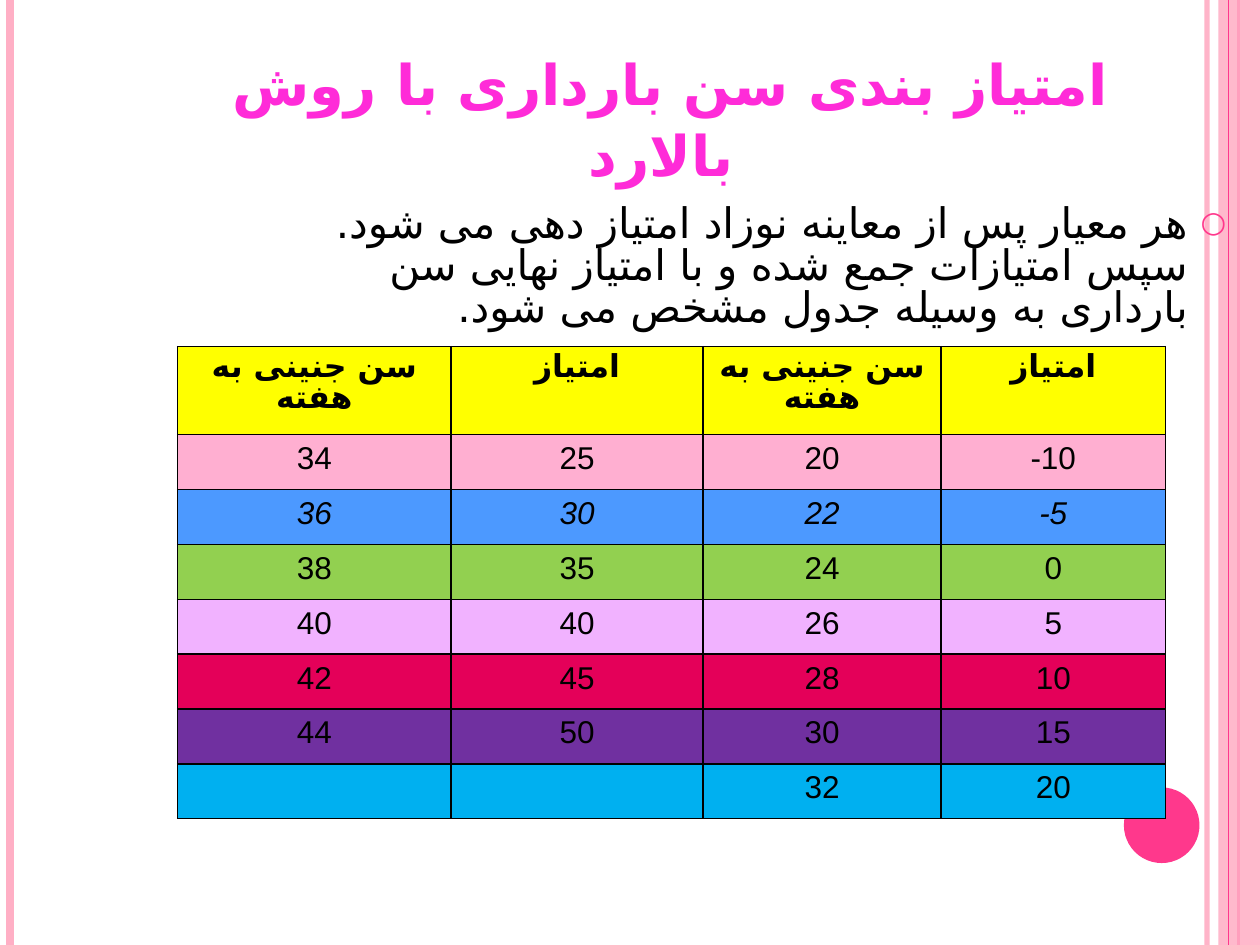
from lxml.etree import SubElement
from pptx import Presentation
from pptx.dml.color import RGBColor
from pptx.enum.shapes import MSO_CONNECTOR, MSO_SHAPE
from pptx.enum.text import MSO_ANCHOR, MSO_AUTO_SIZE, PP_ALIGN
from pptx.oxml.ns import qn
from pptx.util import Inches, Pt

BLACK = RGBColor(0x00, 0x00, 0x00)
PINK = RGBColor(0xFF, 0x38, 0x8C)
PALE_PINK = RGBColor(0xFF, 0xAF, 0xC5)
MAGENTA = RGBColor(0xFF, 0x2B, 0xD8)
MAROON = RGBColor(0x80, 0x00, 0x00)
YELLOW = RGBColor(0xFF, 0xFF, 0x00)
ROSE = RGBColor(0xFF, 0xAF, 0xD1)
BLUE = RGBColor(0x4C, 0x99, 0xFF)
GREEN = RGBColor(0x92, 0xD0, 0x50)
LILAC = RGBColor(0xF1, 0xB2, 0xFF)
CRIMSON = RGBColor(0xE4, 0x00, 0x59)
PURPLE = RGBColor(0x70, 0x30, 0xA0)
CYAN = RGBColor(0x00, 0xB0, 0xF0)

ARABIC_FONT = "DejaVu Sans"
TITLE = "امتیاز بندی سن بارداری با روش بالارد"
BODY = (
    "هر معیار پس از معاینه نوزاد امتیاز دهی می شود. "
    "سپس امتیازات جمع شده و با امتیاز نهایی سن بارداری به وسیله جدول مشخص می شود."
)
AGE, SCORE = "سن جنینی به هفته", "امتیاز"
ROWS = [
    (YELLOW, (AGE, SCORE, AGE, SCORE)),
    (ROSE, ("34", "25", "20", "-10")),
    (BLUE, ("36", "30", "22", "-5")),
    (GREEN, ("38", "35", "24", "0")),
    (LILAC, ("40", "40", "26", "5")),
    (CRIMSON, ("42", "45", "28", "10")),
    (PURPLE, ("44", "50", "30", "15")),
    (CYAN, ("", "", "32", "20")),
]
COLUMN_WIDTHS = (2.17, 2, 1.89, 1.78)
TABLE_HEIGHT, HEADER_HEIGHT = 3.75, 0.7
ROW_HEIGHT = (TABLE_HEIGHT - HEADER_HEIGHT) / (len(ROWS) - 1)
ITALIC_ROW = 2


def set_alpha(fill_parent, percent):
    color = fill_parent.find(".//" + qn("a:srgbClr"))
    SubElement(color, qn("a:alpha"), val=str(percent * 1000))


def add_stripe(slide, left, color, width):
    line = slide.shapes.add_connector(
        MSO_CONNECTOR.STRAIGHT, Inches(left), 0, Inches(left), Inches(7.5)
    )
    line.line.color.rgb = color
    line.line.width = Pt(width)
    SubElement(line.element.spPr, qn("a:effectLst"))
    return line


def add_filled(slide, kind, left, top, width, height, color):
    shape = slide.shapes.add_shape(
        kind, Inches(left), Inches(top), Inches(width), Inches(height)
    )
    shape.shadow.inherit = False
    shape.fill.solid()
    shape.fill.fore_color.rgb = color
    shape.line.fill.background()
    return shape


def add_text_box(slide, left, top, width, height):
    box = slide.shapes.add_textbox(Inches(left), Inches(top), Inches(width), Inches(height))
    box.text_frame.word_wrap = True
    return box.text_frame


def style_span(span, font, size, color, bold=False, italic=False):
    span.font.name = font
    span.font.size = Pt(size)
    span.font.color.rgb = color
    span.font.bold = bold
    span.font.italic = italic
    SubElement(span._r.get_or_add_rPr(), qn("a:cs"), typeface=ARABIC_FONT)


def add_borders(cell):
    properties = cell._tc.get_or_add_tcPr()
    for index, side in enumerate(("a:lnL", "a:lnR", "a:lnT", "a:lnB")):
        border = properties.makeelement(qn(side), {"w": str(Pt(1))})
        fill = SubElement(border, qn("a:solidFill"))
        SubElement(fill, qn("a:srgbClr"), val=str(BLACK))
        properties.insert(index, border)


def add_decoration(slide):
    set_alpha(add_stripe(slide, 9.58, PALE_PINK, 3).element.spPr, 93)
    add_stripe(slide, 0.08, PALE_PINK, 4.5)
    add_stripe(slide, 9.83, PINK, 1.5)
    band = add_filled(slide, MSO_SHAPE.RECTANGLE, 9.67, 0, 0.33, 7.5, PALE_PINK)
    set_alpha(band.element.spPr, 87)
    add_stripe(slide, 9.75, PINK, 0.75)
    add_filled(slide, MSO_SHAPE.OVAL, 8.92, 6.25, 0.6, 0.6, PINK)


def add_body(slide):
    frame = add_text_box(slide, 2.33, 1.58, 7.5, 4.95)
    para = frame.paragraphs[0]
    para.text = BODY
    para.alignment = PP_ALIGN.RIGHT
    para.line_spacing = 0.83
    para.space_before = Pt(6)
    style_span(para.runs[0], "Cambria", 24, BLACK)
    properties = para._p.get_or_add_pPr()
    properties.set("rtl", "1")
    properties.set("marL", str(Inches(0.3)))
    properties.set("indent", str(Inches(-0.3)))
    bullet_color = SubElement(properties, qn("a:buClr"))
    SubElement(bullet_color, qn("a:srgbClr"), val=str(PINK))
    SubElement(properties, qn("a:buSzPct"), val="70000")
    SubElement(properties, qn("a:buFont"), typeface=ARABIC_FONT)
    SubElement(properties, qn("a:buChar"), char="○")


def add_title(slide):
    frame = add_text_box(slide, 1.33, 0.83, 7.83, 0.71)
    frame.vertical_anchor = MSO_ANCHOR.BOTTOM
    frame.auto_size = MSO_AUTO_SIZE.SHAPE_TO_FIT_TEXT
    para = frame.paragraphs[0]
    para.alignment = PP_ALIGN.CENTER
    para.line_spacing = 1.04
    for text, size, color, bold in ((" ", 36, MAROON, False), (TITLE, 32, MAGENTA, True)):
        span = para.add_run()
        span.text = text
        style_span(span, "Cambria", size, color, bold)


def add_score_table(slide):
    table = slide.shapes.add_table(
        len(ROWS), len(COLUMN_WIDTHS),
        Inches(1.41), Inches(2.75), Inches(sum(COLUMN_WIDTHS)), Inches(TABLE_HEIGHT),
    ).table
    for column, width in zip(table.columns, COLUMN_WIDTHS):
        column.width = Inches(width)
    for row_index, (color, values) in enumerate(ROWS):
        is_header = row_index == 0
        table.rows[row_index].height = Inches(HEADER_HEIGHT if is_header else ROW_HEIGHT)
        for column_index, value in enumerate(values):
            cell = table.cell(row_index, column_index)
            cell.fill.solid()
            cell.fill.fore_color.rgb = color
            add_borders(cell)
            para = cell.text_frame.paragraphs[0]
            para.alignment = PP_ALIGN.CENTER
            if is_header:
                para.line_spacing = 0.84
            if value:
                para.text = value
                style_span(para.runs[0], "Arial", 18, BLACK, is_header, row_index == ITALIC_ROW)


def main():
    deck = Presentation()
    deck.slide_width, deck.slide_height = Inches(10), Inches(7.5)
    slide = deck.slides.add_slide(deck.slide_layouts[6])
    add_decoration(slide)
    add_body(slide)
    add_title(slide)
    add_score_table(slide)
    deck.save("out.pptx")


if __name__ == "__main__":
    main()
